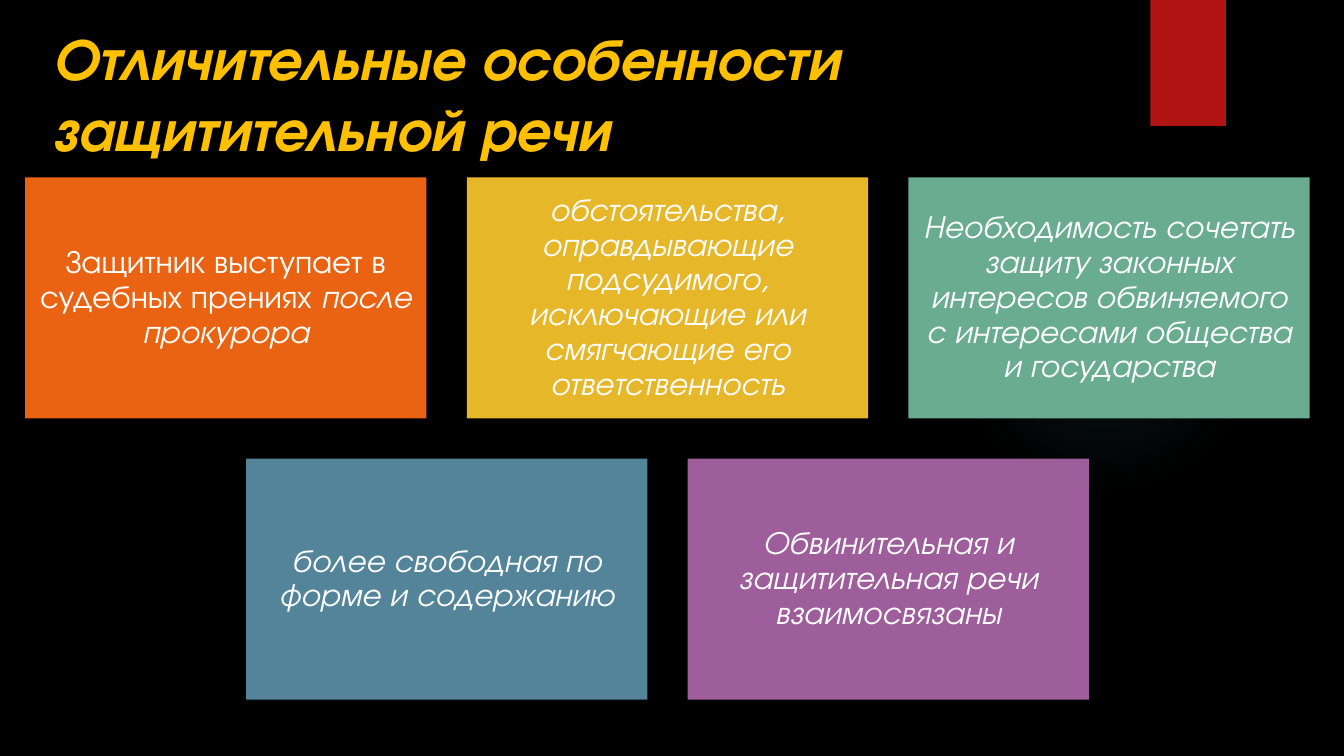
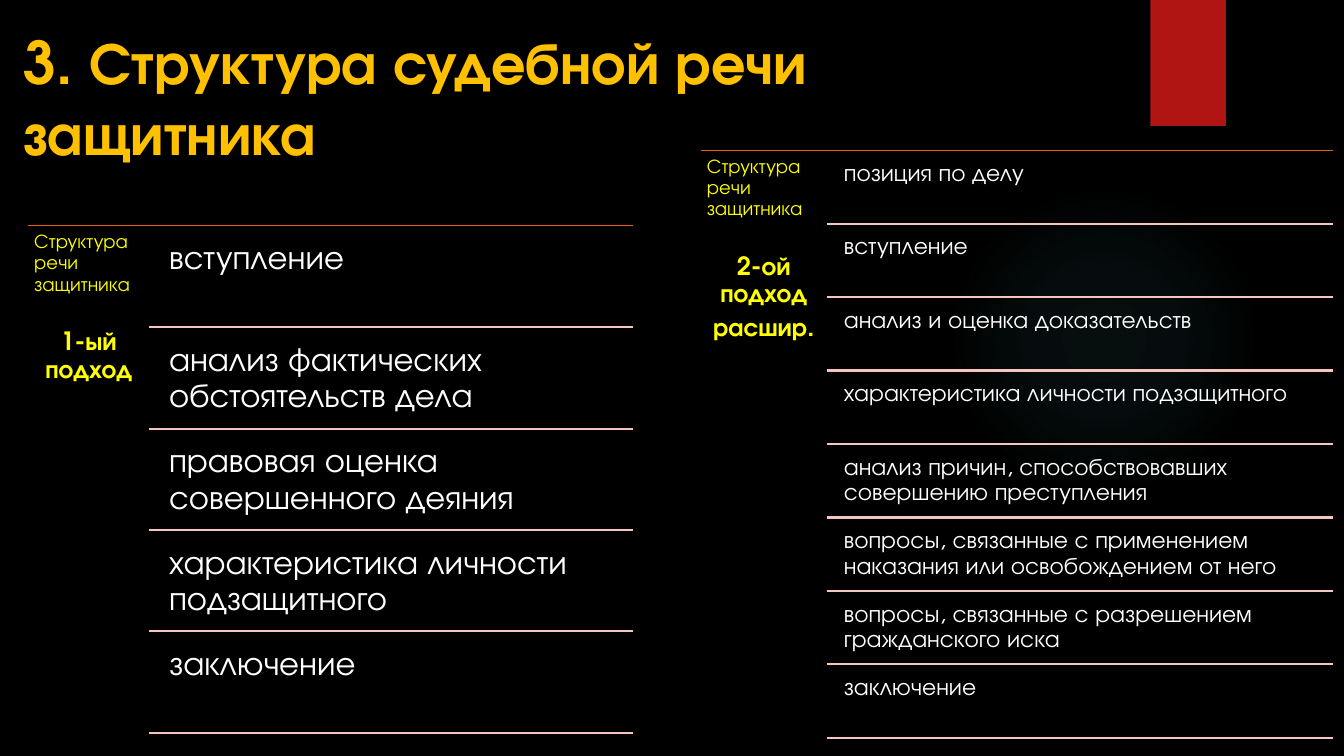
from lxml.etree import SubElement
from pptx import Presentation
from pptx.dml.color import RGBColor
from pptx.enum.shapes import MSO_CONNECTOR, MSO_SHAPE
from pptx.enum.text import MSO_ANCHOR, MSO_AUTO_SIZE, PP_ALIGN
from pptx.oxml import parse_xml
from pptx.oxml.ns import nsdecls, qn
from pptx.util import Inches, Pt

FONT = "TeX Gyre Adventor"
HUES = {
    "back": "000000", "glow": "50B9C1", "tab": "B01513", "title": "FFC000",
    "text": "FFFFFF", "label": "FFFF00", "top": "EA6312", "rule": "F5C6BD",
    "orange": "EA6312", "gold": "E6B729", "green": "6AAC90",
    "blue": "54849A", "plum": "9E5E9B",
}
RGB = {name: RGBColor.from_string(code) for name, code in HUES.items()}


def say(para, text, size, hue, bold=False, italic=False):
    """Add one formatted run to a paragraph."""
    run = para.add_run()
    run.text = text
    font = run.font
    font.name, font.size, font.color.rgb = FONT, Pt(size), RGB[hue]
    font.bold, font.italic = bold, italic


def rule(slide, left, right, y, hue, width):
    """Draw a horizontal line without a shadow."""
    line = slide.shapes.add_connector(
        MSO_CONNECTOR.STRAIGHT, Inches(left), Inches(y), Inches(right), Inches(y))
    line.line.color.rgb, line.line.width = RGB[hue], Pt(width)
    SubElement(line.element.spPr, qn("a:effectLst"))


deck = Presentation()
deck.slide_width, deck.slide_height = Inches(13.33), Inches(7.5)
layout = deck.slide_layouts[5]
layout.background.fill.solid()
layout.background.fill.fore_color.rgb = RGB["back"]

# Titles
titles = [
    ("Отличительные особенности защитительной речи", 0.42, 0.15, True),
    ("3. Структура судебной речи защитника", 0.13, 0.19, False),
]
slides = []
for text, x, y, italic in titles:
    slide = deck.slides.add_slide(layout)
    title = slide.shapes.title
    title.left, title.top = Inches(x), Inches(y)
    title.width, title.height = Inches(10.29), Inches(1.53)
    frame = title.text_frame
    frame.auto_size, frame.word_wrap = MSO_AUTO_SIZE.NONE, True
    frame.vertical_anchor = MSO_ANCHOR.MIDDLE
    para = frame.paragraphs[0]
    para.alignment = PP_ALIGN.LEFT
    say(para, text, 42, "title", True, italic)
    slides.append(slide)
traits, outline = slides

# Glow and corner tab, moved to the shared layout
glow = traits.shapes.add_shape(
    MSO_SHAPE.OVAL, Inches(9.41), Inches(1.83), Inches(3.08), Inches(3.08))
glow.fill.background()
stops = "".join(
    f'<a:gs pos="{pos}000"><a:srgbClr val="{HUES["glow"]}">'
    f'<a:alpha val="{alpha}000"/></a:srgbClr></a:gs>'
    for pos, alpha in [(0, 7), (36, 6), (69, 0)])
blend = parse_xml(
    f'<a:gradFill {nsdecls("a")}><a:gsLst>{stops}</a:gsLst><a:path path="circle">'
    '<a:fillToRect l="50000" t="50000" r="50000" b="50000"/></a:path></a:gradFill>')
props = glow.element.spPr
props.replace(props.find(qn("a:noFill")), blend)

tab = traits.shapes.add_shape(
    MSO_SHAPE.RECTANGLE, Inches(11.41), 0, Inches(0.75), Inches(1.25))
tab.fill.solid()
tab.fill.fore_color.rgb = RGB["tab"]
for place, shape in enumerate([glow, tab], 2):
    shape.line.fill.background()
    shape.shadow.inherit = False
    layout.shapes.element.insert(place, shape.element)

# Slide 1: three cards above two
WIDE, HIGH, GAP = 3.98, 2.39, 0.4
rows = [
    (0.25, [
        ("orange", [("Защитник выступает в судебных прениях ", False),
                    ("после прокурора", True)]),
        ("gold", [("обстоятельства, оправдывающие подсудимого, исключающие "
                   "или смягчающие его ответственность", True)]),
        ("green", [("Необходимость сочетать защиту законных интересов "
                    "обвиняемого с интересами общества и государства", True)]),
    ]),
    (0.25 + (WIDE + GAP) / 2, [
        ("blue", [("более свободная по форме и содержанию", True)]),
        ("plum", [("Обвинительная и защитительная речи взаимосвязаны", True)]),
    ]),
]
for row, (start, cards) in enumerate(rows):
    for col, (hue, runs) in enumerate(cards):
        card = traits.shapes.add_shape(
            MSO_SHAPE.RECTANGLE, Inches(start + col * (WIDE + GAP)),
            Inches(1.76 + row * (HIGH + GAP)), Inches(WIDE), Inches(HIGH))
        card.fill.solid()
        card.fill.fore_color.rgb = RGB[hue]
        card.line.fill.background()
        card.shadow.inherit = False
        frame = card.text_frame
        frame.word_wrap, frame.vertical_anchor = True, MSO_ANCHOR.MIDDLE
        frame.margin_left = frame.margin_right = Inches(0.1)
        frame.margin_top = frame.margin_bottom = Inches(0.1)
        para = frame.paragraphs[0]
        para.alignment, para.line_spacing = PP_ALIGN.CENTER, 0.9
        for text, italic in runs:
            say(para, text, 23, "text", italic=italic)

# Slide 2: two outlines, each a label beside ruled rows
# left, split, right, top, bottom, text size, inset, label lines, rows
lists = [
    (0.28, 1.48, 6.28, 2.24, 7.27, 24, 0.1, ["1-ый подход"], [
        "вступление",
        "анализ фактических обстоятельств дела",
        "правовая оценка совершенного деяния",
        "характеристика личности подзащитного",
        "заключение",
    ]),
    (6.95, 8.2, 13.22, 1.49, 7.32, 17, 0.07, ["2-ой подход", "расшир."], [
        "позиция по делу",
        "вступление",
        "анализ и оценка доказательств",
        "характеристика личности подзащитного",
        "анализ причин, способствовавших совершению преступления",
        "вопросы, связанные с применением наказания или освобождением от него",
        "вопросы, связанные с разрешением гражданского иска",
        "заключение",
    ]),
]
for left, split, right, top, bottom, size, inset, notes, items in lists:
    rule(outline, left, right, top, "top", 0.75)
    step = (bottom - top) / len(items)
    heads = [("Структура речи защитника", 14, False, PP_ALIGN.LEFT, 0)]
    for gap, note in zip([24, 5], notes):
        heads.append((note, 18, True, PP_ALIGN.CENTER, gap))
    boxes = [(left, top, split - left, bottom - top, 0.06, "label", heads)]
    for i, item in enumerate(items):
        rule(outline, split, right, top + (i + 1) * step, "rule", 1.5)
        x, y = split + 0.1, top + (i + 0.05) * step
        lines = [(item, size, False, PP_ALIGN.LEFT, 0)]
        boxes.append((x, y, right - x, step * 0.95, inset, "text", lines))

    for x, y, wide, high, pad, hue, lines in boxes:
        box = outline.shapes.add_textbox(
            Inches(x), Inches(y), Inches(wide), Inches(high))
        frame = box.text_frame
        frame.word_wrap = True
        frame.margin_left = frame.margin_right = Inches(pad)
        frame.margin_top = frame.margin_bottom = Inches(pad)
        for i, (text, points, bold, align, gap) in enumerate(lines):
            para = frame.add_paragraph() if i else frame.paragraphs[0]
            para.alignment, para.line_spacing = align, 0.9
            if gap:
                para.space_before = Pt(gap)
            say(para, text, points, hue, bold)

deck.save("out.pptx")
